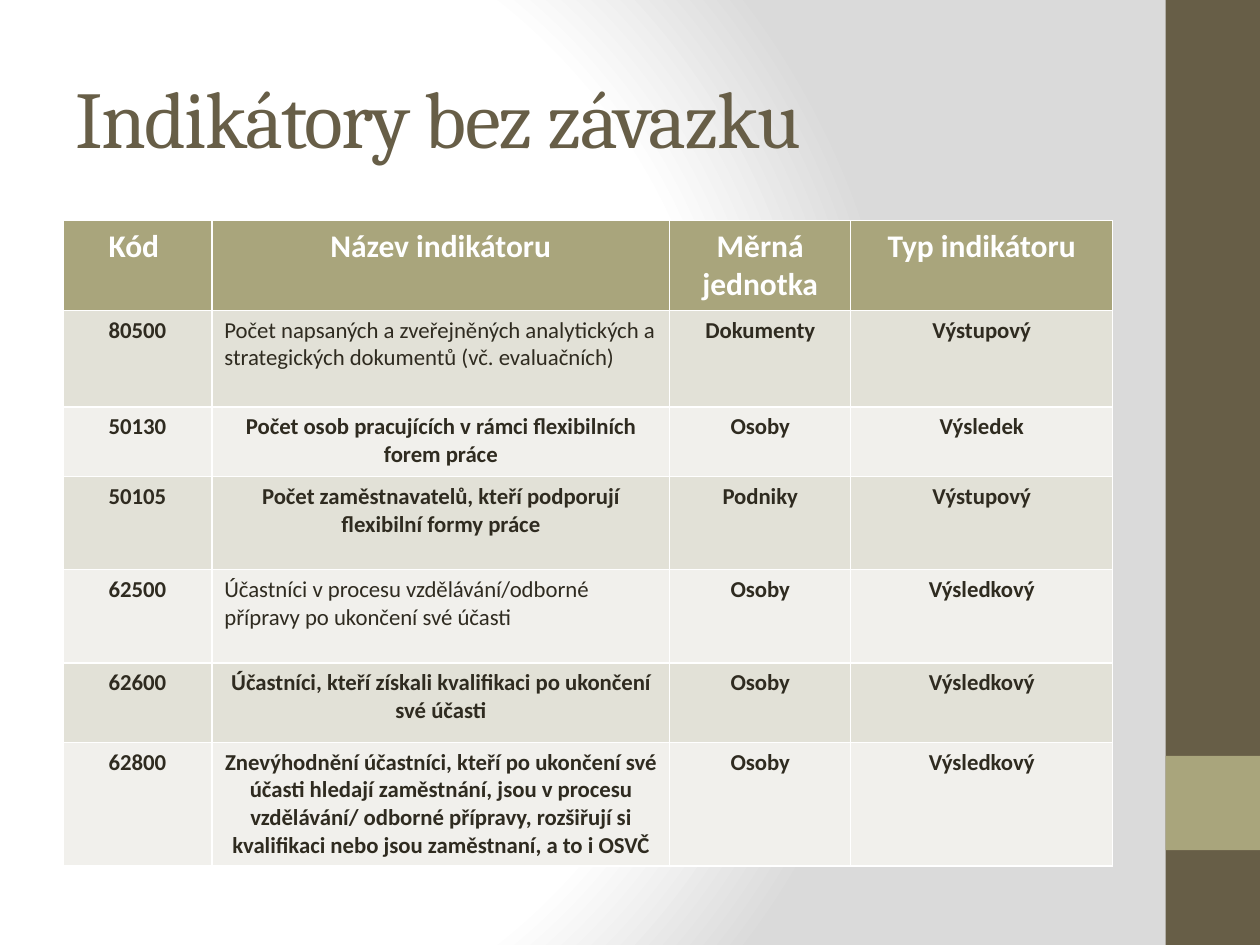
from lxml import etree
from pptx import Presentation
from pptx.dml.color import RGBColor
from pptx.enum.shapes import MSO_SHAPE
from pptx.enum.text import MSO_ANCHOR, PP_ALIGN
from pptx.oxml import parse_xml
from pptx.oxml.ns import nsdecls
from pptx.util import Cm, Pt

WHITE = RGBColor(0xFF, 0xFF, 0xFF)
GREY = RGBColor(0xDA, 0xDA, 0xDA)
BROWN = RGBColor(0x67, 0x5E, 0x47)
OLIVE = RGBColor(0xA9, 0xA5, 0x7C)
INK = RGBColor(0x2F, 0x2B, 0x20)
BANDS = (RGBColor(0xE2, 0xE1, 0xD7), RGBColor(0xF1, 0xF0, 0xEC))

TITLE_FONT = {"name": "Cambria", "size": Pt(46), "bold": False}
HEADER_FONT = {"name": "Calibri", "size": Pt(18), "bold": True}
BODY_FONT = {"name": "Calibri", "size": Pt(13), "bold": True}

COLUMN_WIDTHS = (3.0, 9.23, 3.65, 5.28)
ROW_HEIGHTS = (1.78, 1.95, 1.4, 1.88, 1.88, 1.6, 2.49)
HEADINGS = ("Kód ", "Název indikátoru", "Měrná jednotka", "Typ indikátoru")
INDICATORS = (
    ("80500", "Počet napsaných a zveřejněných analytických a "
     "strategických dokumentů (vč. evaluačních)", "Dokumenty", "Výstupový"),
    ("50130", "Počet osob pracujících v rámci flexibilních forem práce",
     "Osoby", "Výsledek"),
    ("50105", "Počet zaměstnavatelů, kteří podporují flexibilní formy práce",
     "Podniky", "Výstupový"),
    ("62500", "Účastníci v procesu vzdělávání/odborné přípravy "
     "po ukončení své účasti", "Osoby", "Výsledkový"),
    ("62600", "Účastníci, kteří získali kvalifikaci po ukončení své účasti",
     "Osoby", "Výsledkový"),
    ("62800", "Znevýhodnění účastníci, kteří po ukončení své účasti hledají "
     "zaměstnání, jsou v procesu vzdělávání/ odborné přípravy, rozšiřují si "
     "kvalifikaci nebo jsou zaměstnaní, a to i OSVČ", "Osoby", "Výsledkový"),
)
PLAIN_CODES = ("80500", "62500")  # names set regular and flush left


def format_font(font, values, color):
    for attribute, value in values.items():
        setattr(font, attribute, value)
    font.color.rgb = color


def set_background(slide):
    """Radial gradient, which python-pptx has no public method for."""
    stops = "".join(
        f'<a:gs pos="{position}"><a:srgbClr val="{color}"/></a:gs>'
        for position, color in ((0, WHITE), (75000, WHITE), (100000, GREY)))
    background = parse_xml(
        f'<p:bg {nsdecls("p", "a")}><p:bgPr><a:gradFill rotWithShape="1">'
        f'<a:gsLst>{stops}</a:gsLst><a:path path="circle">'
        '<a:fillToRect l="20000" t="50000" r="100000" b="50000"/></a:path>'
        '</a:gradFill><a:effectLst/></p:bgPr></p:bg>')
    slide.element.cSld.insert(0, background)


def add_side_band(slide, left, top, width, height):
    # Dark band with a square accent at four fifths of its height
    for band_top, band_height, color in ((top, height, BROWN),
                                         (top + height * 0.8, width, OLIVE)):
        band = slide.shapes.add_shape(MSO_SHAPE.RECTANGLE, Cm(left),
                                      Cm(band_top), Cm(width), Cm(band_height))
        band.shadow.inherit = False
        band.fill.solid()
        band.fill.fore_color.rgb = color
        band.line.fill.background()


def place_title(slide, left, top, width, height):
    title = slide.shapes.title
    box = {"left": left, "top": top, "width": width, "height": height}
    for attribute, value in box.items():
        setattr(title, attribute, Cm(value))
    title.text_frame.text = "Indikátory bez závazku"
    title.text_frame.vertical_anchor = MSO_ANCHOR.MIDDLE
    paragraph = title.text_frame.paragraphs[0]
    paragraph.alignment = PP_ALIGN.LEFT
    heading = paragraph.runs[0]
    format_font(heading.font, TITLE_FONT, BROWN)
    heading.font._element.set("spc", "-100")  # tighter letters


def fill_cell(cell, text, font, color, background):
    cell.fill.solid()
    cell.fill.fore_color.rgb = background
    cell.text = text
    paragraph = cell.text_frame.paragraphs[0]
    paragraph.alignment = PP_ALIGN.CENTER if font["bold"] else PP_ALIGN.LEFT
    format_font(paragraph.runs[0].font, font, color)


def add_indicator_table(slide, left, top):
    table = slide.shapes.add_table(
        len(ROW_HEIGHTS), len(COLUMN_WIDTHS), Cm(left), Cm(top),
        Cm(sum(COLUMN_WIDTHS)), Cm(sum(ROW_HEIGHTS))).table
    for column, width in zip(table.columns, COLUMN_WIDTHS):
        column.width = Cm(width)
    for row, height in zip(table.rows, ROW_HEIGHTS):
        row.height = Cm(height)

    # Header row
    for cell, heading in zip(table.rows[0].cells, HEADINGS):
        fill_cell(cell, heading, HEADER_FONT, WHITE, OLIVE)

    # Indicator rows in alternating bands
    for number, indicator in enumerate(INDICATORS):
        for column, text in enumerate(indicator):
            plain = column == 1 and indicator[0] in PLAIN_CODES
            fill_cell(table.cell(number + 1, column), text,
                      {**BODY_FONT, "bold": not plain}, INK,
                      BANDS[number % 2])


def main():
    presentation = Presentation()
    presentation.slide_width, presentation.slide_height = Cm(25.4), Cm(19.05)
    slide = presentation.slides.add_slide(presentation.slide_layouts[5])
    set_background(slide)
    add_side_band(slide, 23.5, 0, 1.9, 19.05)
    place_title(slide, 1.27, 0.76, 21.17, 3.18)
    add_indicator_table(slide, 1.27, 4.45)
    presentation.save("out.pptx")


if __name__ == "__main__":
    main()
